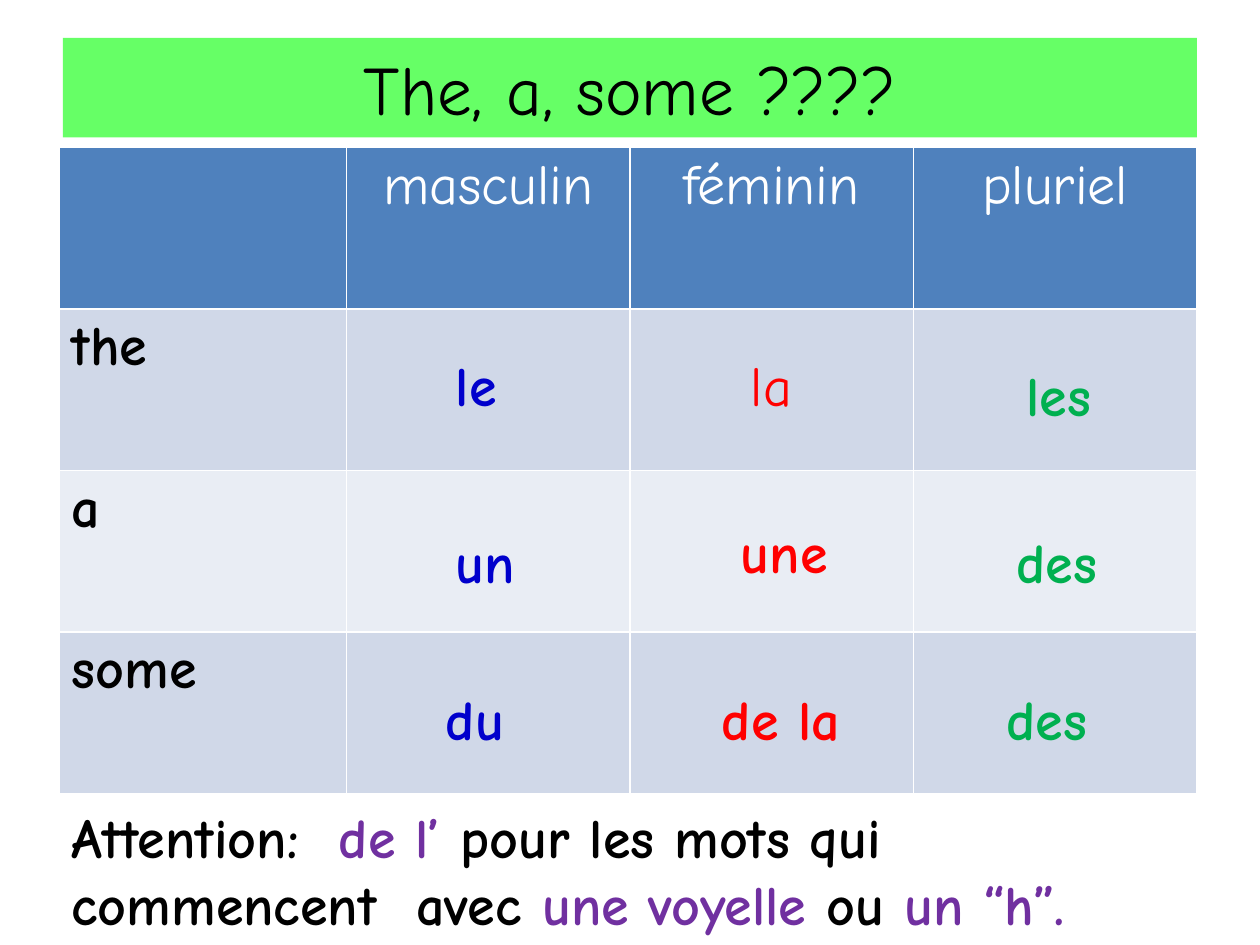
from dataclasses import dataclass

from lxml.etree import SubElement
from pptx import Presentation
from pptx.dml.color import RGBColor as RGB
from pptx.enum.shapes import MSO_SHAPE as Shape
from pptx.enum.text import MSO_ANCHOR as Anchor, MSO_AUTO_SIZE as AutoSize, PP_ALIGN as Align
from pptx.oxml.ns import qn
from pptx.util import Inches, Pt


@dataclass(frozen=True)
class Theme:
    font: str = "Comic Neue"
    title_size: float = 39.6
    body_size: float = 32
    black: str = "000000"
    white: str = "FFFFFF"
    banner: str = "66FF66"
    header: str = "4F81BD"
    bands: tuple = ("D0D8E8", "E9EDF4")
    genders: tuple = ("0000CC", "FF0000", "00B050")
    accent: str = "7030A0"


@dataclass(frozen=True)
class Box:
    left: float
    top: float
    width: float
    height: float

    def lengths(self):
        return [Inches(v) for v in (self.left, self.top, self.width, self.height)]


THEME = Theme()
HEADINGS = ("", "masculin", "féminin", "pluriel")
ARTICLES = ("the", "a", "some")
FIRST_COLUMN, COLUMN, ROW = 2.28, 2.25, 1.2825

# Each answer: text, bold, offset from its cell's corner, width
ANSWERS = (
    (("le", True, 0.77, 0.28, 0.57), ("la", False, 0.86, 0.28, 0.55), ("les", True, 0.80, 0.36, 0.79)),
    (("un", True, 0.77, 0.40, 0.67), ("une", True, 0.78, 0.32, 0.92), ("des", True, 0.72, 0.40, 0.93)),
    (("du", True, 0.69, 0.37, 0.70), ("de la", True, 0.63, 0.37, 1.28), ("des", True, 0.64, 0.37, 0.93)),
)
NOTE = (
    (("Attention:  ", THEME.black), ("de l’ ", THEME.accent), ("pour les mots qui", THEME.black)),
    (("commencent  avec ", THEME.black), ("une voyelle ", THEME.accent),
     ("ou ", THEME.black), ("un “h”.", THEME.accent)),
)


def style(paragraph, color, bold=False, size=THEME.body_size, align=Align.LEFT):
    paragraph.alignment = align
    font = paragraph.font
    font.name, font.size, font.bold = THEME.font, Pt(size), bold
    font.color.rgb = RGB.from_string(color)


def add_text_frame(slide, box):
    frame = slide.shapes.add_textbox(*box.lengths()).text_frame
    frame.word_wrap = False
    frame.auto_size = AutoSize.SHAPE_TO_FIT_TEXT
    return frame


def add_title(slide, box):
    banner = slide.shapes.add_shape(Shape.RECTANGLE, *box.lengths())
    banner.shadow.inherit = False
    banner.fill.solid()
    banner.fill.fore_color.rgb = RGB.from_string(THEME.banner)
    banner.line.fill.background()
    frame = banner.text_frame
    frame.vertical_anchor = Anchor.MIDDLE
    frame.text = "The, a, some ????"
    style(frame.paragraphs[0], THEME.black, size=THEME.title_size, align=Align.CENTER)


def fill_cell(cell, color):
    # Borders come before the fill in the cell's properties
    properties = cell._tc.get_or_add_tcPr()
    for side in ("lnL", "lnR", "lnT", "lnB"):
        line = SubElement(properties, qn(f"a:{side}"), w=str(Pt(1)))
        solid = SubElement(line, qn("a:solidFill"))
        SubElement(solid, qn("a:srgbClr"), val=THEME.white)
    cell.fill.solid()
    cell.fill.fore_color.rgb = RGB.from_string(color)


def add_article_table(slide, box):
    rows = [HEADINGS] + [(article, "", "", "") for article in ARTICLES]
    table = slide.shapes.add_table(len(rows), len(HEADINGS), *box.lengths()).table
    table.first_row = table.horz_banding = False
    for index, column in enumerate(table.columns):
        column.width = Inches(COLUMN if index else FIRST_COLUMN)
    for r, texts in enumerate(rows):
        table.rows[r].height = Inches(ROW)
        for c, text in enumerate(texts):
            cell = table.cell(r, c)
            fill_cell(cell, THEME.bands[(r - 1) % 2] if r else THEME.header)
            cell.text = text
            paragraph = cell.text_frame.paragraphs[0]
            if r:
                style(paragraph, THEME.black, bold=True)
            else:
                style(paragraph, THEME.white, align=Align.CENTER)


def add_answers(slide, box):
    for r, answers in enumerate(ANSWERS):
        for c, (text, bold, dx, dy, width) in enumerate(answers):
            left = box.left + FIRST_COLUMN + c * COLUMN + dx
            top = box.top + (r + 1) * ROW + dy
            frame = add_text_frame(slide, Box(left, top, width, 0.64))
            frame.text = text
            style(frame.paragraphs[0], THEME.genders[c], bold)


def add_note(slide, box):
    frame = add_text_frame(slide, box)
    for index, pieces in enumerate(NOTE):
        paragraph = frame.add_paragraph() if index else frame.paragraphs[0]
        style(paragraph, THEME.black, bold=True)
        for text, color in pieces:
            run = paragraph.add_run()
            run.text = text
            run.font.color.rgb = RGB.from_string(color)


def main():
    presentation = Presentation()
    presentation.slide_width, presentation.slide_height = Inches(10), Inches(7.5)
    slide = presentation.slides.add_slide(presentation.slide_layouts[6])

    grid = Box(0.47, 1.17, FIRST_COLUMN + 3 * COLUMN, 4 * ROW)
    add_title(slide, Box(0.5, 0.3, 9, 0.79))
    add_article_table(slide, grid)
    add_answers(slide, grid)
    add_note(slide, Box(grid.left, 6.32, 9.05, 1.18))

    presentation.save("out.pptx")


if __name__ == "__main__":
    main()
